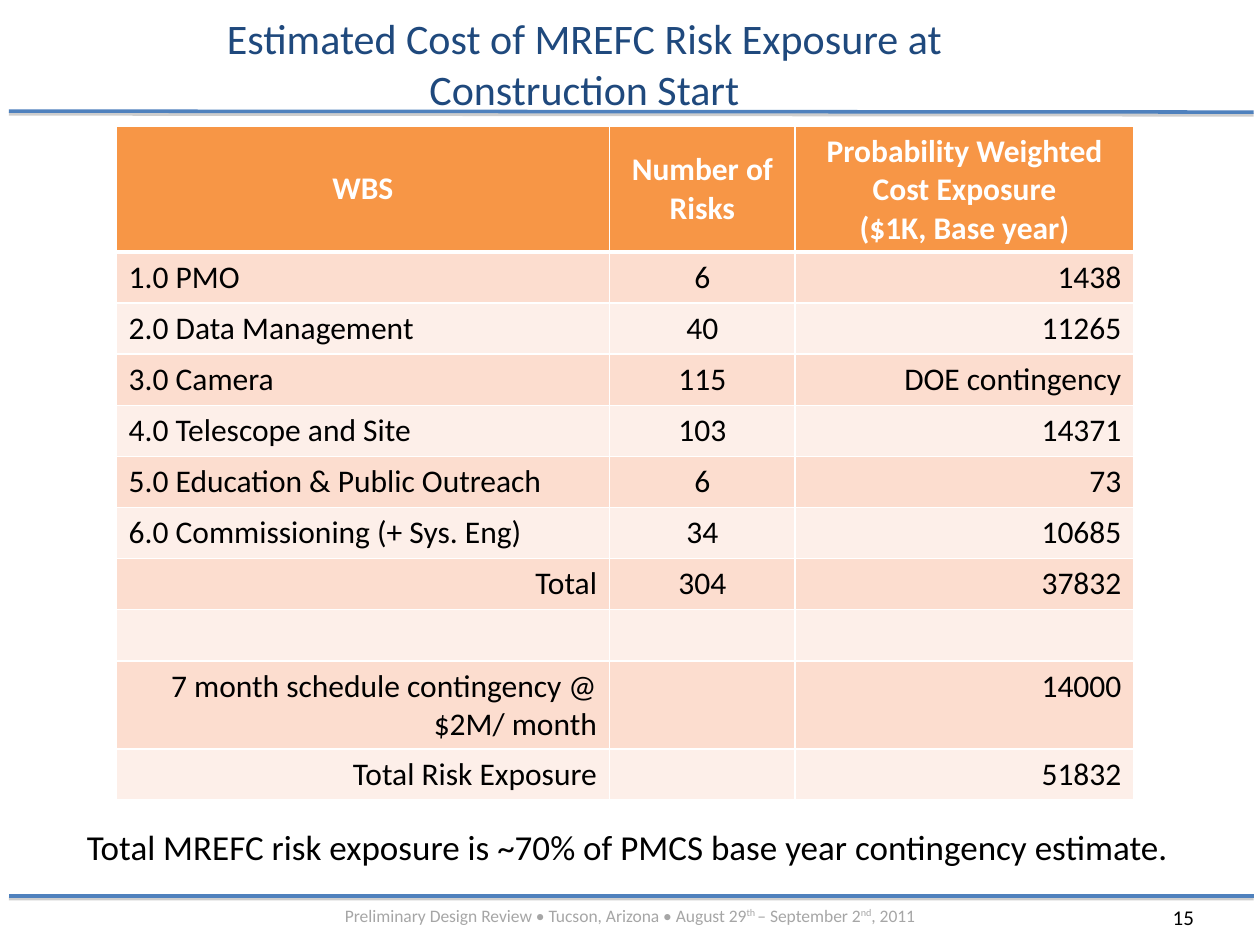
import lxml.etree
import pptx
import pptx.dml.color
import pptx.enum.shapes
import pptx.enum.text
import pptx.oxml.ns
import pptx.util

Cm = pptx.util.Cm
Pt = pptx.util.Pt
RGBColor = pptx.dml.color.RGBColor
ALIGN = pptx.enum.text.PP_ALIGN
ANCHOR = pptx.enum.text.MSO_ANCHOR
qn = pptx.oxml.ns.qn

WHITE = RGBColor(0xFF, 0xFF, 0xFF)
BLACK = RGBColor(0x00, 0x00, 0x00)
GREY = RGBColor(0xA6, 0xA6, 0xA6)
SHADOW = RGBColor(0x80, 0x80, 0x80)
NAVY = RGBColor(0x1F, 0x49, 0x7D)
BLUE = RGBColor(0x4F, 0x81, 0xBD)
ORANGE = RGBColor(0xF7, 0x96, 0x46)
PEACH = RGBColor(0xFC, 0xDD, 0xCF)
PALE = RGBColor(0xFD, 0xEF, 0xE9)


def add_xml(parent, tag, **attrs):
    return lxml.etree.SubElement(parent, qn(tag), {k: str(v) for k, v in attrs.items()})


class Deck:
    font = "Calibri"

    def __init__(self, width, height):
        self.prs = pptx.Presentation()
        self.prs.slide_width = Cm(width)
        self.prs.slide_height = Cm(height)

    def add_slide(self):
        self.s = self.prs.slides.add_slide(self.prs.slide_layouts[6])

    def run(self, p, text, size, color, bold=False, raised=False):
        r = p.add_run()
        r.text = text
        r.font.name = self.font
        r.font.size = Pt(size)
        r.font.color.rgb = color
        r.font.bold = bold
        if raised:
            r.font._element.set("baseline", "30000")

    def text(self, x, y, w, h, runs, size, color, align=ALIGN.LEFT,
             anchor=ANCHOR.TOP, wrap=True):
        """Add one paragraph; runs are (text, raised) pairs."""
        sp = self.s.shapes.add_textbox(Cm(x), Cm(y), Cm(w), Cm(h))
        tf = sp.text_frame
        tf.word_wrap = wrap
        tf.vertical_anchor = anchor
        p = tf.paragraphs[0]
        p.alignment = align
        for text, raised in runs:
            self.run(p, text, size, color, raised=raised)

    def rule(self, x1, y1, x2, y2):
        sp = self.s.shapes.add_connector(
            pptx.enum.shapes.MSO_CONNECTOR.STRAIGHT, Cm(x1), Cm(y1), Cm(x2), Cm(y2))
        sp.line.color.rgb = BLUE
        sp.line.width = Pt(2)
        effects = add_xml(sp._element.spPr, "a:effectLst")
        shadow = add_xml(effects, "a:outerShdw", blurRad=0, dist=Pt(1.6),
                         dir=90 * 60000, rotWithShape=0)
        add_xml(add_xml(shadow, "a:srgbClr", val=SHADOW), "a:alpha", val=38000)

    def borders(self, cell, top, bottom):
        tc_pr = cell._tc.get_or_add_tcPr()
        for tag, width in (("a:lnL", 1), ("a:lnR", 1), ("a:lnT", top), ("a:lnB", bottom)):
            ln = add_xml(tc_pr, tag, w=Pt(width))
            add_xml(add_xml(ln, "a:solidFill"), "a:srgbClr", val=WHITE)

    def cell(self, cell, lines, fill, color, align, bold, top, bottom):
        self.borders(cell, top, bottom)
        cell.fill.solid()
        cell.fill.fore_color.rgb = fill
        cell.vertical_anchor = ANCHOR.MIDDLE if bold else ANCHOR.TOP
        tf = cell.text_frame
        for i, line in enumerate(lines):
            p = tf.add_paragraph() if i else tf.paragraphs[0]
            p.alignment = align
            if line:
                self.run(p, line, 18, color, bold)

    def table(self, x, y, widths, row_height, header, rows, summary_start):
        """Rows from summary_start on have a right-aligned label."""
        data = [header] + rows
        sp = self.s.shapes.add_table(len(data), len(widths), Cm(x), Cm(y),
                                     Cm(sum(widths)), Cm(row_height * len(data)))
        table = sp.table
        for col, width in zip(table.columns, widths):
            col.width = Cm(width)
        for i, row in enumerate(data):
            table.rows[i].height = Cm(row_height)
            head = i == 0
            fill = ORANGE if head else (PALE, PEACH)[i % 2]
            label = ALIGN.RIGHT if i >= summary_start else ALIGN.LEFT
            aligns = [ALIGN.CENTER] * 3 if head else [label, ALIGN.CENTER, ALIGN.RIGHT]
            for j, value in enumerate(row):
                self.cell(table.cell(i, j), value.split("\n"), fill,
                          WHITE if head else BLACK, aligns[j], head,
                          top=3 if i == 1 else 1, bottom=3 if head else 1)


HEADER = ["WBS", "Number of Risks",
          "Probability Weighted Cost Exposure\n($1K, Base year)"]
ROWS = [
    ["1.0 PMO", "6", "1438"],
    ["2.0 Data Management", "40", "11265"],
    ["3.0 Camera", "115", "DOE contingency"],
    ["4.0 Telescope and Site", "103", "14371"],
    ["5.0 Education & Public Outreach", "6", "73"],
    ["6.0 Commissioning (+ Sys. Eng)", "34", "10685"],
    ["Total", "304", "37832"],
    ["", "", ""],
    ["7 month schedule contingency @ $2M/ month", "", "14000"],
    ["Total Risk Exposure", "", "51832"],
]
FOOTER = [
    ("Preliminary Design Review • Tucson, Arizona • August 29", False),
    ("th ", True),
    ("– September 2", False),
    ("nd", True),
    (", 2011", False),
]


def main():
    deck = Deck(25.4, 19.05)
    deck.add_slide()

    # Rules and footer
    deck.rule(25.27, 2.26, 0.18, 2.24)
    deck.rule(25.27, 18.06, 0.18, 18.06)
    deck.text(23.39, 18.11, 1.57, 0.76, [("15", False)], 12, BLACK)
    deck.text(1.27, 18.11, 22.86, 0.69, FOOTER, 10, GREY, ALIGN.CENTER)

    # Title
    deck.text(3.18, 0.41, 17.2, 1.73,
              [("Estimated Cost of MREFC Risk Exposure at Construction Start", False)],
              24, NAVY, ALIGN.CENTER, ANCHOR.MIDDLE)

    # Risk table
    deck.table(2.34, 2.54, [9.95, 3.74, 6.83], 1.03, HEADER, ROWS, summary_start=7)

    # Conclusion
    deck.text(1.5, 16.51, 22.63, 1.12,
              [("Total MREFC risk exposure is ~70% of PMCS base year "
                "contingency estimate.", False)], 20, BLACK, wrap=False)

    deck.prs.save("out.pptx")


if __name__ == "__main__":
    main()
